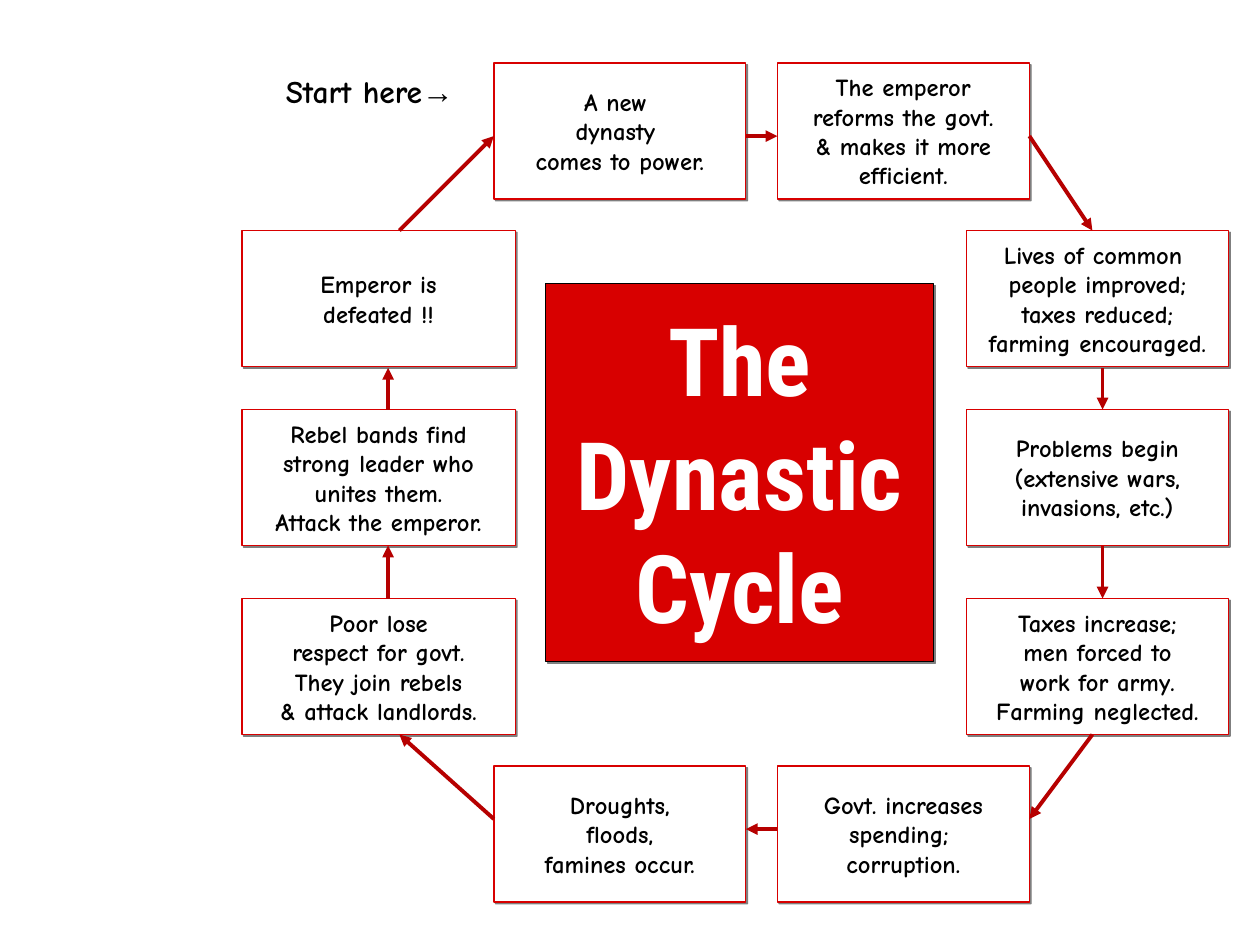
import copy

import pptx
import pptx.dml.color
import pptx.enum.shapes
import pptx.enum.text
import pptx.oxml
import pptx.oxml.ns
import pptx.util

Inches = pptx.util.Inches
Pt = pptx.util.Pt
qn = pptx.oxml.ns.qn
SHAPE = pptx.enum.shapes.MSO_SHAPE
ALIGN = pptx.enum.text.PP_ALIGN
A_NS = 'xmlns:a="http://schemas.openxmlformats.org/drawingml/2006/main"'


def rgb(value):
    return pptx.dml.color.RGBColor.from_string(value)


def element(tag, attributes="", content=""):
    return pptx.oxml.parse_xml(f"<a:{tag} {A_NS} {attributes}>{content}</a:{tag}>")


class CycleSlide:
    RED, ARROW, BLACK, WHITE = "D80000", "B60000", "000000", "FFFFFF"
    TITLE = {"name": "Roboto Condensed", "size": Pt(54), "bold": True, "color": WHITE}
    BODY = {"name": "Comic Neue", "size": Pt(14), "bold": True, "color": BLACK}
    LABEL = {**BODY, "size": Pt(18)}
    FRAME = {
        "auto_size": pptx.enum.text.MSO_AUTO_SIZE.NONE,
        "word_wrap": False,
        "vertical_anchor": pptx.enum.text.MSO_ANCHOR.MIDDLE,
        "margin_left": Inches(0.1), "margin_right": Inches(0.1),
        "margin_top": Inches(0.05), "margin_bottom": Inches(0.05),
    }

    def __init__(self, prs):
        self.slide = prs.slides.add_slide(prs.slide_layouts[5])

    def style_run(self, r, style):
        for name, value in style.items():
            if name == "color":
                r.font.color.rgb = rgb(value)
            else:
                setattr(r.font, name, value)

    def fill_text(self, sp, text, style):
        tf = sp.text_frame
        for name, value in self.FRAME.items():
            setattr(tf, name, value)
        p = tf.paragraphs[0]
        p.text = text.replace("\n", "\v")
        p.alignment = ALIGN.CENTER
        for r in p.runs:
            self.style_run(r, style)
        # Line breaks take the text size too
        for br in p._p.findall(qn("a:br")):
            br.insert(0, copy.deepcopy(p.runs[0]._r.rPr))

    def paint(self, sp, fill, line, shadow, alpha):
        sp.fill.solid()
        sp.fill.fore_color.rgb = rgb(fill)
        sp.line.color.rgb = rgb(line)
        sp.line.width = Pt(0.75)
        sp.shadow.inherit = False
        sp._element.spPr.find(qn("a:effectLst")).append(element(
            "outerShdw",
            f'dist="{Pt(1.4)}" dir="2700000" algn="ctr" rotWithShape="0"',
            f'<a:srgbClr val="{shadow}"><a:alpha val="{alpha * 1000}"/></a:srgbClr>'))

    def title(self, text, x, y, w, h):
        sp = self.slide.shapes.title
        sp.left, sp.top, sp.width, sp.height = map(Inches, (x, y, w, h))
        sp._element.spPr.append(element("prstGeom", 'prst="ellipse"', "<a:avLst/>"))
        self.paint(sp, self.RED, self.BLACK, "808080", 100)
        self.fill_text(sp, text, self.TITLE)

    def box(self, text, x, y, w, h=1.08):
        sp = self.slide.shapes.add_shape(SHAPE.RECTANGLE, *map(Inches, (x, y, w, h)))
        self.paint(sp, self.WHITE, self.RED, self.BLACK, 50)
        self.fill_text(sp, text, self.BODY)

    def arrow(self, *ends):
        kind = pptx.enum.shapes.MSO_CONNECTOR.STRAIGHT
        cxn = self.slide.shapes.add_connector(kind, *map(Inches, ends))
        cxn.line.color.rgb = rgb(self.ARROW)
        cxn.line.width = Pt(2.25)
        spPr = cxn._element.spPr
        spPr.find(qn("a:ln")).append(element("tailEnd", 'type="triangle"'))
        spPr.append(element("effectLst"))

    def label(self, text, symbol, x, y, w, h):
        sp = self.slide.shapes.add_textbox(*map(Inches, (x, y, w, h)))
        tf = sp.text_frame
        tf.word_wrap = True
        p = tf.paragraphs[0]
        p.space_before = Pt(11.2)
        for part, font in ((text, "Comic Neue"), (symbol, "Arial")):
            r = p.add_run()
            r.text = part
            self.style_run(r, {**self.LABEL, "name": font})


# Stages by side of the ring
TOP = ["A new \ndynasty \ncomes to power.",
       "The emperor\nreforms the govt.\n& makes it more\nefficient."]
RIGHT = ["Lives of common \npeople improved;\ntaxes reduced;\nfarming encouraged.",
         "Problems begin\n(extensive wars,\ninvasions, etc.)",
         "Taxes increase;\nmen forced to\nwork for army.\nFarming neglected."]
BOTTOM = ["Droughts,\nfloods,\nfamines occur.",
          "Govt. increases\nspending; \ncorruption."]
LEFT = ["Emperor is\ndefeated !!",
        "Rebel bands find\nstrong leader who\nunites them.\nAttack the emperor.",
        "Poor lose\nrespect for govt.\nThey join rebels\n& attack landlords."]
COLUMNS = [3.92, 6.17]
ROWS = [1.83, 3.25, 4.75]

# Arrows, clockwise from the first stage
ARROWS = [
    (5.92, 1.08, 6.17, 1.08), (8.17, 1.08, 8.67, 1.83),
    (8.75, 2.92, 8.75, 3.25), (8.75, 4.33, 8.75, 4.75),
    (8.67, 5.83, 8.17, 6.5), (6.17, 6.58, 5.92, 6.58),
    (3.92, 6.5, 3.17, 5.83), (3.08, 4.75, 3.08, 4.33),
    (3.08, 3.25, 3.08, 2.92), (3.17, 1.83, 3.92, 1.08),
]


def main():
    prs = pptx.Presentation()
    prs.slide_width, prs.slide_height = Inches(10), Inches(7.5)
    s = CycleSlide(prs)

    # Centre
    s.title("The\nDynastic\nCycle", 4.33, 2.25, 3.08, 3)

    # Ring of boxes
    for texts, y in ((TOP, 0.5), (BOTTOM, 6.08)):
        for text, x in zip(texts, COLUMNS):
            s.box(text, x, y, 2)
    for texts, x, w in ((RIGHT, 7.67, 2.08), (LEFT, 1.92, 2.17)):
        for text, y in zip(texts, ROWS):
            s.box(text, x, y, w)

    # Arrows and starting point
    for ends in ARROWS:
        s.arrow(*ends)
    s.label("Start here", "→", 2.17, 0.52, 1.83, 0.4)

    prs.save("out.pptx")


if __name__ == "__main__":
    main()
